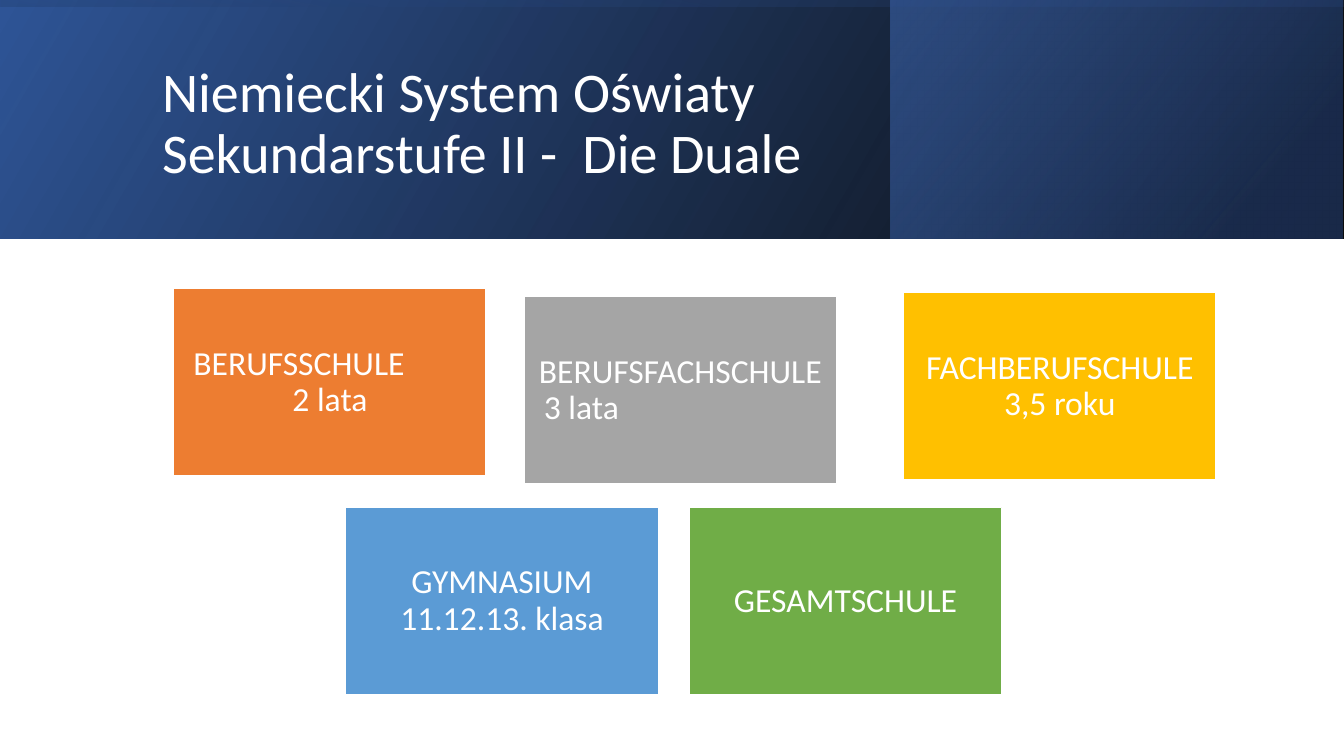
"""Build a slide on German upper secondary schools."""
from typing import NamedTuple

from lxml.etree import SubElement
from pptx import Presentation
from pptx.dml.color import RGBColor
from pptx.enum.shapes import MSO_SHAPE
from pptx.enum.text import MSO_ANCHOR, PP_ALIGN
from pptx.oxml.ns import qn
from pptx.util import Pt

WIDE, HIGH = 960, 540
BAND_HIGH = 170.7
BOX_WIDE, BOX_HIGH = 223.2, 133.9
INSET = 7.2
WHITE = "FFFFFF"


class Stop(NamedTuple):
    place: int
    color: str
    alpha: int


class Band(NamedTuple):
    left: float
    top: float
    width: float
    height: float
    turn: int
    angle: int
    stops: list[Stop]


class Line(NamedTuple):
    text: str
    indent: float | None = None


class School(NamedTuple):
    left: float
    top: float
    color: str
    lines: list[Line]


SIDE = (WIDE - BAND_HIGH) / 2
BANDS = [
    Band(0, 0, WIDE, BAND_HIGH, 0, 330,
         [Stop(0, "000000", 96), Stop(100, "2F5597", 100)]),
    Band(636.2, 0, 323, BAND_HIGH, 0, 320,
         [Stop(19, "203864", 68), Stop(100, "4472C4", 48)]),
    Band(SIDE, -SIDE, BAND_HIGH, WIDE, 270, 350,
         [Stop(23, "2F5597", 16), Stop(99, "000000", 45)]),
]
SCHOOLS = [
    School(124.1, 206.2, "ED7D31", [Line("BERUFSSCHULE", 7), Line("2 lata")]),
    School(374.4, 211.9, "A5A5A5", [Line("BERUFSFACHSCHULE"), Line("3 lata", 7)]),
    School(645.4, 209, "FFC000", [Line("FACHBERUFSCHULE"), Line("3,5 roku")]),
    School(247, 362.5, "5B9BD5", [Line("GYMNASIUM"), Line("11.12.13. klasa")]),
    School(492.4, 362.5, "70AD47", [Line("GESAMTSCHULE")]),
]


def paint(code: str) -> RGBColor:
    """Turn a hex string into a colour."""
    return RGBColor.from_string(code)


def add_rect(slide, left: float, top: float, width: float, height: float):
    """Add a plain rectangle without shadow."""
    rect = slide.shapes.add_shape(
        MSO_SHAPE.RECTANGLE, Pt(left), Pt(top), Pt(width), Pt(height))
    rect.shadow.inherit = False
    return rect


def style(para, size: float) -> None:
    """Format the runs of a paragraph."""
    para.line_spacing = 0.9
    for run in para.runs:
        run.font.name = "Calibri"
        run.font.size = Pt(size)
        run.font.color.rgb = paint(WHITE)


def draw_band(slide, band: Band) -> None:
    """Draw one mirrored gradient band."""
    rect = add_rect(slide, band.left, band.top, band.width, band.height)
    rect.rotation = band.turn
    rect.line.fill.background()
    rect.fill.gradient()
    props = rect._element.spPr
    props.find(qn("a:xfrm")).set("flipH", "1")
    grad = props.find(qn("a:gradFill"))
    for child in list(grad):
        grad.remove(child)
    stops = SubElement(grad, qn("a:gsLst"))
    for stop in band.stops:
        mark = SubElement(stops, qn("a:gs"), pos=str(stop.place * 1000))
        color = SubElement(mark, qn("a:srgbClr"), val=stop.color)
        SubElement(color, qn("a:alpha"), val=str(stop.alpha * 1000))
    SubElement(grad, qn("a:lin"), ang=str(band.angle * 60000), scaled="0")


def draw_title(slide) -> None:
    """Write the title over the bands."""
    box = slide.shapes.add_textbox(Pt(108.7), Pt(27.4), Pt(765.4), Pt(123.8))
    frame = box.text_frame
    frame.word_wrap = True
    frame.vertical_anchor = MSO_ANCHOR.MIDDLE
    para = frame.paragraphs[0]
    para.text = "Niemiecki System Oświaty\vSekundarstufe II -  Die Duale"
    style(para, 40)


def draw_school(slide, school: School) -> None:
    """Draw one school box with its lines."""
    rect = add_rect(slide, school.left, school.top, BOX_WIDE, BOX_HIGH)
    rect.fill.solid()
    rect.fill.fore_color.rgb = paint(school.color)
    rect.line.color.rgb = paint(WHITE)
    rect.line.width = Pt(1)
    frame = rect.text_frame
    frame.word_wrap = True
    frame.vertical_anchor = MSO_ANCHOR.MIDDLE
    frame.margin_left = frame.margin_right = Pt(INSET)
    frame.margin_top = frame.margin_bottom = Pt(INSET)
    frame.text = "\n".join(line.text for line in school.lines)
    for para, line in zip(frame.paragraphs, school.lines):
        para.alignment = PP_ALIGN.CENTER
        if line.indent is not None:
            para.alignment = PP_ALIGN.LEFT
            para._p.get_or_add_pPr().set("marL", str(Pt(line.indent)))
        style(para, 24)


def main() -> None:
    """Build and save the slide."""
    deck = Presentation()
    deck.slide_width, deck.slide_height = Pt(WIDE), Pt(HIGH)
    slide = deck.slides.add_slide(deck.slide_layouts[6])
    for band in BANDS:
        draw_band(slide, band)
    draw_title(slide)
    for school in SCHOOLS:
        draw_school(slide, school)
    deck.save("out.pptx")


if __name__ == "__main__":
    main()
